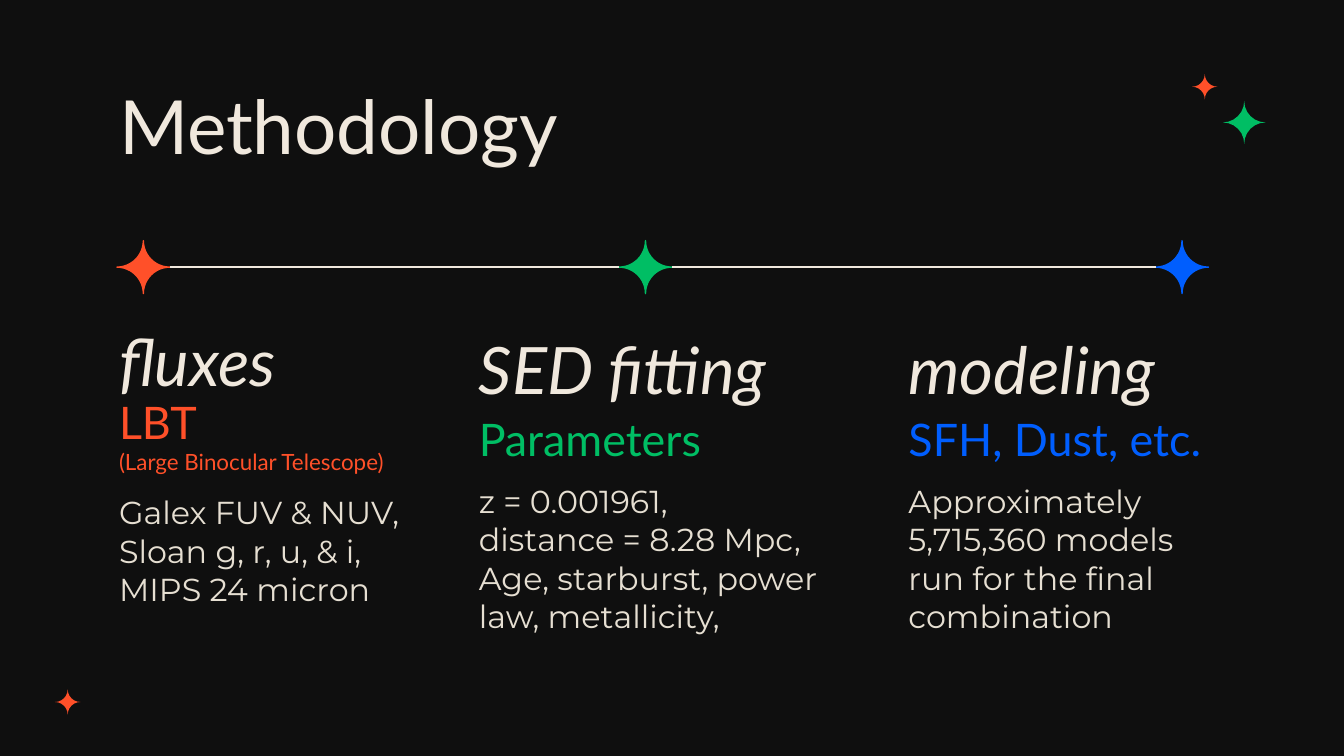
from lxml import etree
from pptx import Presentation
from pptx import util as u
from pptx.dml.color import RGBColor
from pptx.enum import shapes, text
from pptx.oxml.ns import qn

Cm = u.Cm
INK, CREAM, SAND = "0F0F0F", "F0E8DD", "E6DFD2"
RED, GREEN, BLUE = "FF5029", "00BE64", "005EFE"

TITLE = dict(name="Lato", size=u.Pt(40))
HEAD = dict(name="Lato", size=u.Pt(35), italic=True)
SUB = dict(name="Lato", size=u.Pt(24))
NOTE = dict(name="Lato", size=u.Pt(12))
BODY = dict(name="Montserrat", size=u.Pt(17))


def tint(part, color):
    """Set a font, fill or line colour from a hex string."""
    part.rgb = RGBColor.from_string(color)


def write(slide, box, lines, color, anchor=text.MSO_ANCHOR.TOP):
    """Add a text box; lines holds pairs of wording and font format."""
    frame = slide.shapes.add_textbox(*map(Cm, box)).text_frame
    inset = u.Inches(0.1)
    setup = dict(word_wrap=True, vertical_anchor=anchor, margin_left=inset,
                 margin_right=inset, margin_top=inset, margin_bottom=inset)
    for key, value in setup.items():
        setattr(frame, key, value)
    for i, (words, style) in enumerate(lines):
        para = frame.paragraphs[0] if i == 0 else frame.add_paragraph()
        run = para.add_run()
        run.text = words
        for key, value in style.items():
            setattr(run.font, key, value)
        tint(run.font.color, color)


def star(slide, left, top, size, color, edge=False):
    """Add a four-pointed star in a square box."""
    item = slide.shapes.add_shape(
        shapes.MSO_SHAPE.PLAQUE, Cm(left), Cm(top), Cm(size), Cm(size))
    item.adjustments[0] = 0.5
    item.shadow.inherit = False
    item.fill.solid()
    tint(item.fill.fore_color, color)
    if edge:
        tint(item.line.color, color)
        item.line.width = u.Pt(0.75)
    else:
        item.line.fill.background()


def timeline(slide, top, size, stops):
    """Place a star at each stop and join neighbours with a line."""
    for left, color in stops:
        star(slide, left, top, size, color, edge=True)
    mid = top + size / 2
    for (left, _), (right, _) in zip(stops, stops[1:]):
        line = slide.shapes.add_connector(
            shapes.MSO_CONNECTOR.STRAIGHT,
            Cm(left + size), Cm(mid), Cm(right), Cm(mid))
        tint(line.line.color, CREAM)
        line.line.width = u.Pt(0.75)
        etree.SubElement(line._element.spPr, qn("a:effectLst"))


def column(slide, left, top, widths, drops, color, head, subs, body):
    """Stack heading, coloured subheading and body text."""
    wide = dict(zip(("head", "sub", "body"), widths))
    write(slide, (left, top, wide["head"], 1.63), [(head, HEAD)], CREAM,
          text.MSO_ANCHOR.MIDDLE)
    write(slide, (left, top + drops[0], wide["sub"], 1.47),
          list(zip(subs, (SUB, NOTE))), color, text.MSO_ANCHOR.BOTTOM)
    write(slide, (left, top + drops[1], wide["body"], 3.1),
          [(words, BODY) for words in body], SAND)


def main():
    deck = Presentation()
    deck.slide_width, deck.slide_height = Cm(25.4), Cm(14.29)
    slide = deck.slides.add_slide(deck.slide_layouts[6])
    slide.background.fill.solid()
    tint(slide.background.fill.fore_color, INK)

    # Corner stars
    for spot in ((23.11, 1.91, 0.81, GREEN), (1.04, 13.03, 0.48, RED),
                 (22.53, 1.4, 0.48, RED)):
        star(slide, *spot)

    # Title and timeline
    write(slide, (2, 1.25, 21.4, 1.6), [("Methodology", TITLE)], CREAM)
    timeline(slide, 4.55, 1, [(2.21, RED), (11.7, GREEN), (21.84, BLUE)])

    # Three steps
    column(slide, 2, 5.99, (4.67, 6.02, 6.55), (1.78, 3.08), RED, "fluxes",
           ["LBT", "(Large Binocular Telescope)"],
           ["Galex FUV & NUV, Sloan g, r, u, & i,", "MIPS 24 micron"])
    column(slide, 8.8, 6.15, (6.83, 6.02, 7.19), (1.44, 2.71), GREEN,
           "SED fitting", ["Parameters"],
           ["z = 0.001961,", "distance = 8.28 Mpc,",
            "Age, starburst, power law, metallicity,"])
    column(slide, 16.92, 6.15, (6.02, 8.08, 6.55), (1.44, 2.71), BLUE,
           "modeling", ["SFH, Dust, etc."],
           ["Approximately 5,715,360 models run for the final combination"])

    deck.save("out.pptx")


if __name__ == "__main__":
    main()
